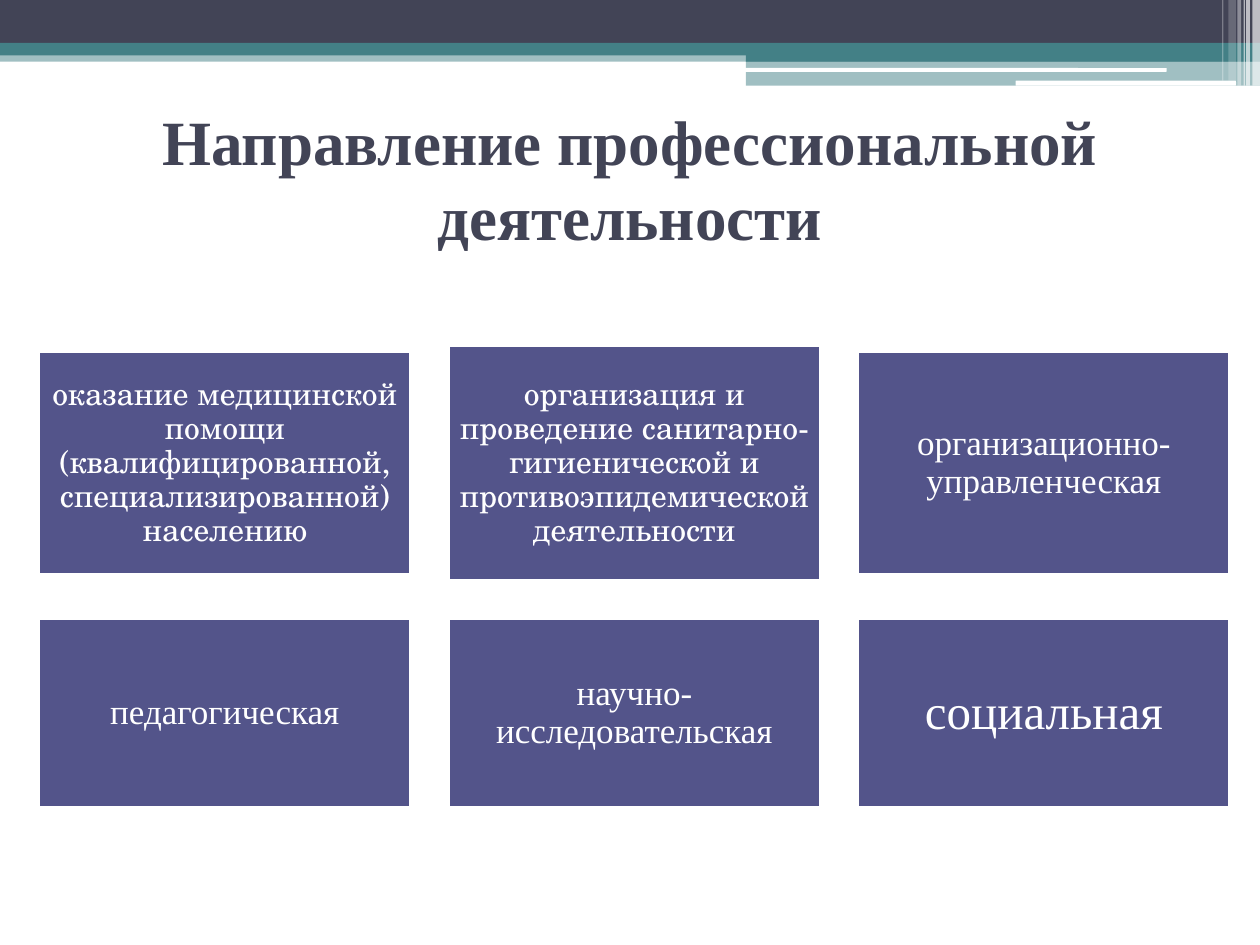
from lxml import etree
from pptx import Presentation
from pptx.dml.color import RGBColor
from pptx.enum.shapes import MSO_SHAPE
from pptx.enum.text import MSO_ANCHOR, PP_ALIGN
from pptx.oxml.ns import qn
from pptx.util import Inches, Pt

RECT, ROUNDED = MSO_SHAPE.RECTANGLE, MSO_SHAPE.ROUNDED_RECTANGLE
MIDDLE, CENTER = MSO_ANCHOR.MIDDLE, PP_ALIGN.CENTER
COLORS = {"dark": "424456", "teal": "438086", "card": "53548A", "white": "FFFFFF"}
SERIF, SCHOLA = "Times New Roman", "TeX Gyre Schola"

prs = Presentation()
prs.slide_width, prs.slide_height = Inches(10), Inches(7.5)
slide = prs.slides.add_slide(prs.slide_layouts[6])


def add_block(kind, left, top, width, height, color, opacity=100):
    block = slide.shapes.add_shape(
        kind, Inches(left), Inches(top), Inches(width), Inches(height))
    block.shadow.inherit = False
    block.fill.solid()
    block.fill.fore_color.rgb = RGBColor.from_string(COLORS[color])
    block.line.fill.background()
    if opacity < 100:
        tint = block._element.spPr.find(qn("a:solidFill"))[0]
        etree.SubElement(tint, qn("a:alpha")).set("val", str(opacity * 1000))
    return block


def write_text(holder, text, font, size, color, inset, bold=False):
    frame = holder.text_frame
    frame.word_wrap = True
    frame.vertical_anchor = MIDDLE
    frame.margin_left = frame.margin_right = Inches(inset)
    frame.margin_top = frame.margin_bottom = Inches(inset)
    paragraph = frame.paragraphs[0]
    paragraph.alignment = CENTER
    run = paragraph.add_run()
    run.text = text
    run.font.name, run.font.size, run.font.bold = font, Pt(size), bold
    run.font.color.rgb = RGBColor.from_string(COLORS[color])
    return paragraph


header_bands = [
    (RECT, 0, 0.4, 10, 0.09, "teal", 50),
    (RECT, 0, 0, 10, 0.34, "dark", 100),
    (RECT, 0, 0.34, 10, 0.1, "teal", 100),
    (RECT, 5.92, 0.39, 4.08, 0.1, "teal", 100),
    (RECT, 5.92, 0.48, 4.08, 0.2, "teal", 50),
    (ROUNDED, 5.91, 0.54, 3.35, 0.03, "white", 100),
    (ROUNDED, 8.06, 0.64, 1.75, 0.04, "white", 100),
]
for band in header_bands:
    add_block(*band)

corner_stripes = [
    (9.94, 0.06, 0.68, 65), (9.89, 0.03, 0.68, 65), (9.87, 0.01, 0.68, 60),
    (9.82, 0.03, 0.68, 40), (9.75, 0.06, 0.64, 20), (9.7, 0.01, 0.64, 30),
]
for left, width, height, opacity in corner_stripes:
    add_block(RECT, left, 0, width, height, "white", opacity)

title = slide.shapes.add_textbox(Inches(0.5), Inches(0.94), Inches(9), Inches(0.94))
write_text(title, "Направление профессиональной деятельности", SERIF, 36, "dark", 0.05, True)

LEFT, CARD_WIDTH, GAP = 0.31, 2.95, 0.3
ROW_CENTERS = [3.675, 5.66]
directions = [
    [("оказание медицинской помощи (квалифицированной, специализированной) населению",
      SCHOLA, 18, 0.07, 1.77),
     ("организация и проведение санитарно-гигиенической и противоэпидемической деятельности",
      SCHOLA, 18, 0.07, 1.87),
     ("организационно-управленческая", SERIF, 20, 0.08, 1.77)],
    [("педагогическая", SERIF, 20, 0.08, 1.5),
     ("научно-исследовательская", SERIF, 20, 0.08, 1.5),
     ("социальная", SERIF, 28, 0.12, 1.5)],
]
for center, row in zip(ROW_CENTERS, directions):
    for column, (text, font, size, inset, height) in enumerate(row):
        card = add_block(RECT, LEFT + column * (CARD_WIDTH + GAP), center - height / 2,
                         CARD_WIDTH, height, "card")
        card.line.color.rgb = RGBColor.from_string(COLORS["white"])
        card.line.width = Pt(1.5)
        paragraph = write_text(card, text, font, size, "white", inset)
        paragraph.line_spacing = 0.9
        paragraph.space_after = Pt(size * 0.35)

prs.save("out.pptx")
